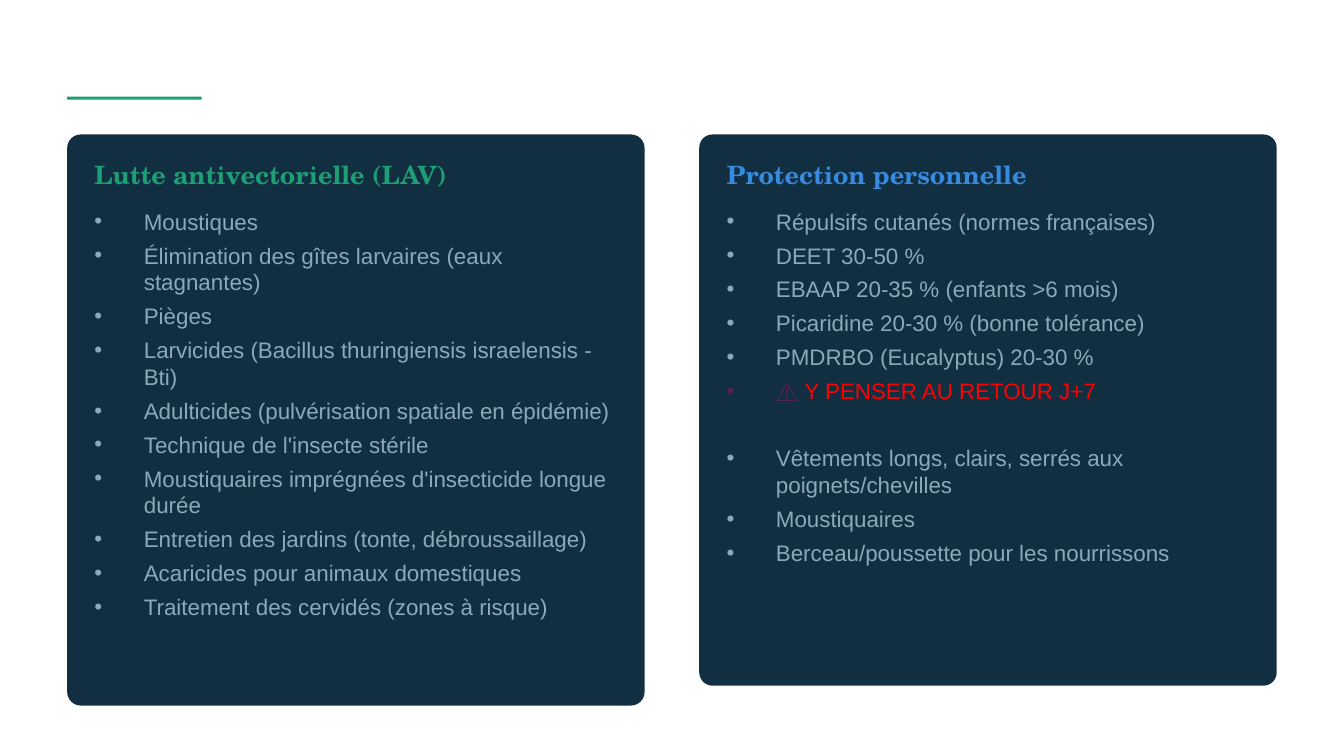
from lxml.etree import SubElement
from pptx import Presentation
from pptx.dml.color import RGBColor
from pptx.enum.shapes import MSO_SHAPE
from pptx.enum.text import MSO_ANCHOR, MSO_AUTO_SIZE
from pptx.oxml.ns import qn
from pptx.util import Pt

GREEN = RGBColor(0x1D, 0x9E, 0x75)
BLUE = RGBColor(0x37, 0x8A, 0xDD)
NAVY = RGBColor(0x12, 0x2F, 0x42)
GREY = RGBColor(0x8B, 0xAA, 0xB8)
PLUM = RGBColor(0x59, 0x1F, 0x54)
RED = RGBColor(0xFF, 0x00, 0x00)

# Content: heading, colour, card height, groups of items
# An item is a string, or a list of (text, colour) runs
CARDS = [
    ("Lutte antivectorielle (LAV)", GREEN, 544, [[
        "Moustiques",
        "Élimination des gîtes larvaires (eaux stagnantes)",
        "Pièges",
        "Larvicides (Bacillus thuringiensis israelensis - Bti)",
        "Adulticides (pulvérisation spatiale en épidémie)",
        "Technique de l'insecte stérile",
        "Moustiquaires imprégnées d'insecticide longue durée",
        "Entretien des jardins (tonte, débroussaillage)",
        "Acaricides pour animaux domestiques",
        "Traitement des cervidés (zones à risque)",
    ]]),
    ("Protection personnelle", BLUE, 525, [[
        "Répulsifs cutanés (normes françaises)",
        "DEET 30-50 %",
        "EBAAP 20-35 % (enfants >6 mois)",
        "Picaridine 20-30 % (bonne tolérance)",
        "PMDRBO (Eucalyptus) 20-30 %",
        [("⚠️ ", PLUM), ("Y PENSER AU RETOUR J+7", RED)],
    ], [
        "Vêtements longs, clairs, serrés aux poignets/chevilles",
        "Moustiquaires",
        "Berceau/poussette pour les nourrissons",
    ]]),
]
HEAD = {"name": "TeX Gyre Schola", "size": Pt(18), "bold": True}
BODY = {"name": "Arial", "size": Pt(16), "bold": False}

# Layout in px, 96 to the inch
PX = 9525
LEFT, TOP, WIDE, GAP = 64, 128, 550, 52
PAD, INNER, INDENT = 26, 499, 47
ITEM_GAP, GROUP_GAP = Pt(5), Pt(29)

deck = Presentation()
deck.slide_width, deck.slide_height = 1280 * PX, 720 * PX
slide = deck.slides.add_slide(deck.slide_layouts[6])


def add_block(kind, x, y, w, h, color):
    shape = slide.shapes.add_shape(kind, x * PX, y * PX, w * PX, h * PX)
    shape.shadow.inherit = False
    shape.fill.solid()
    shape.fill.fore_color.rgb = color
    shape.line.fill.background()
    return shape


def add_box(x, y, h, anchor):
    box = slide.shapes.add_textbox(x * PX, y * PX, INNER * PX, h * PX)
    frame = box.text_frame
    style = {"word_wrap": True, "auto_size": MSO_AUTO_SIZE.SHAPE_TO_FIT_TEXT,
             "vertical_anchor": anchor, "margin_left": 0, "margin_right": 0,
             "margin_top": 0, "margin_bottom": 0}
    for key, value in style.items():
        setattr(frame, key, value)
    return frame


def add_run(para, text, color, style):
    run = para.add_run()
    run.text = text
    for key, value in style.items():
        setattr(run.font, key, value)
    run.font.color.rgb = color


def add_bullet(para):
    props = para._p.get_or_add_pPr()
    props.set("marL", str(INDENT * PX))
    props.set("indent", str(-INDENT * PX))
    SubElement(props, qn("a:buFont")).set("typeface", "Arial")
    SubElement(props, qn("a:buChar")).set("char", "•")


def add_list(frame, groups):
    para = frame.paragraphs[0]
    space = None
    for group in groups:
        for item in group:
            if space is not None:
                para = frame.add_paragraph()
                para.space_before = space
            add_bullet(para)
            runs = [(item, GREY)] if isinstance(item, str) else item
            for text, color in runs:
                add_run(para, text, color, BODY)
            space = ITEM_GAP
        space = GROUP_GAP


# Accent rule
add_block(MSO_SHAPE.RECTANGLE, LEFT, 92, 128, 3, GREEN)

# Cards with heading and bullets
for i, (title, color, high, groups) in enumerate(CARDS):
    x = LEFT + i * (WIDE + GAP)
    card = add_block(MSO_SHAPE.ROUNDED_RECTANGLE, x, TOP, WIDE, high, NAVY)
    card.adjustments[0] = 0.024
    head = add_box(x + PAD, TOP + 24, 29, MSO_ANCHOR.MIDDLE)
    add_run(head.paragraphs[0], title, color, HEAD)
    add_list(add_box(x + PAD, TOP + 70, 319, MSO_ANCHOR.TOP), groups)

deck.save("out.pptx")
